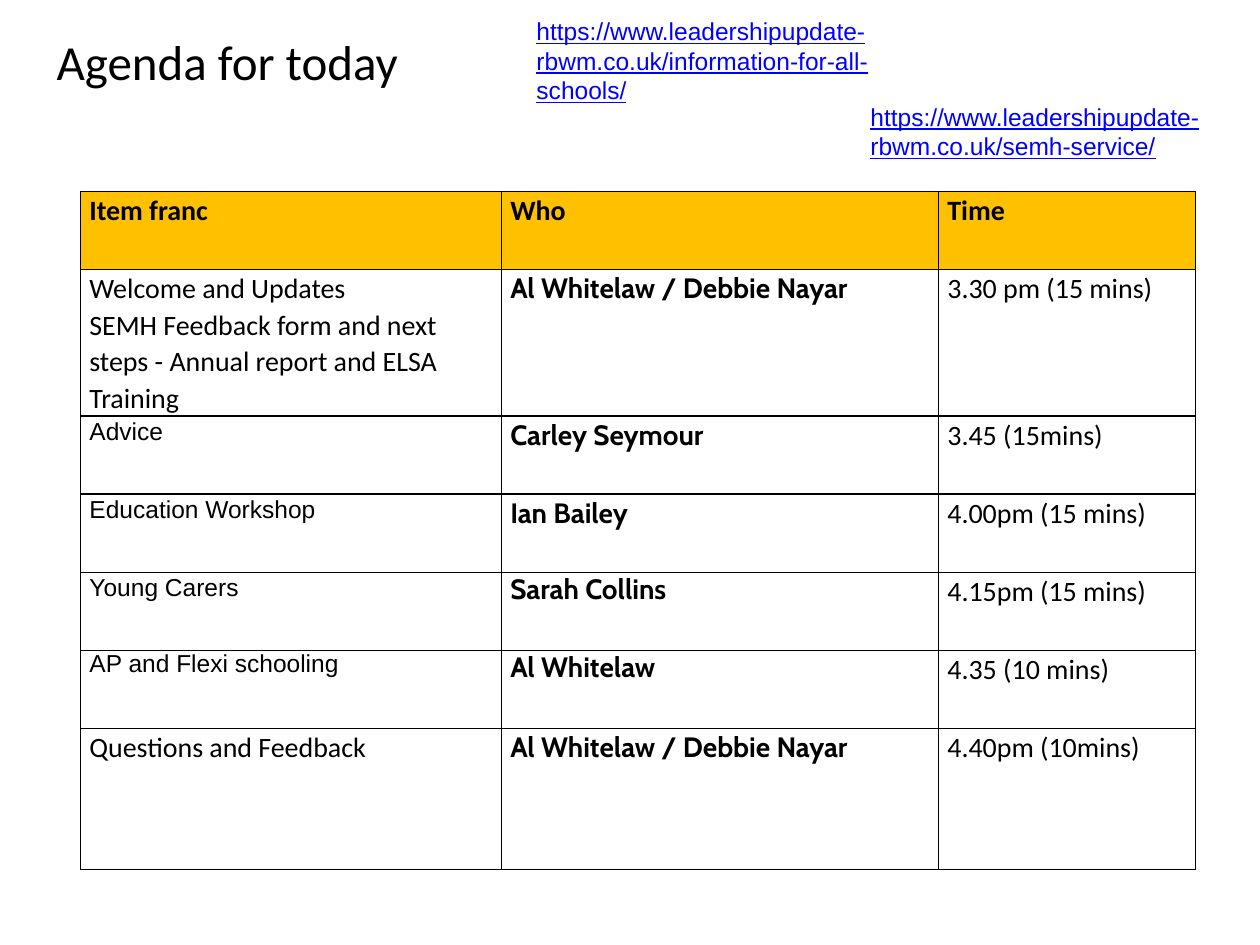
from pptx import Presentation
from pptx.dml.color import RGBColor
from pptx.enum.text import MSO_ANCHOR as Anchor, PP_ALIGN as Align
from pptx.oxml import parse_xml
from pptx.oxml.ns import nsdecls
from pptx.util import Inches, Pt

BLACK = RGBColor(0, 0, 0)
BLUE = RGBColor(0, 0, 255)
GOLD = RGBColor(255, 192, 0)

COLS = (3.34, 3.47, 2.04)
HEIGHTS = (0.62, 0.65, 0.62, 0.62, 0.62, 0.62, 1.12)
HEAD = ("Item franc", "Who", "Time")
ROWS = (
    ("Welcome and Updates\nSEMH Feedback form and next steps - Annual report and ELSA Training",
     "Al Whitelaw / Debbie Nayar", "3.30 pm (15 mins)"),
    ("Advice", "Carley Seymour", "3.45 (15mins)"),
    ("Education Workshop", "Ian Bailey", "4.00pm (15 mins)"),
    ("Young Carers", "Sarah Collins", "4.15pm (15 mins)"),
    ("AP and Flexi schooling", "Al Whitelaw", "4.35 (10 mins)"),
    ("Questions and Feedback", "Al Whitelaw / Debbie Nayar", "4.40pm (10mins)"),
)
SMALL = {(r, 0) for r in range(2, 6)}
TIGHT = {(4, 1), (5, 0), (5, 1)}
LINKS = (
    ("https://www.leadershipupdate-rbwm.co.uk/semh-service/", (6.81, 0.76, 3.1, 0.57)),
    ("https://www.leadershipupdate-rbwm.co.uk/information-for-all-schools/",
     (4.16, 0.08, 3.1, 0.81)),
)


def style(frame, name, size, color, bold=False, line=False):
    """Format every run in a text frame."""
    for par in frame.paragraphs:
        for run in par.runs:
            font = run.font
            font.name, font.size, font.bold = name, Pt(size), bold
            font.color.rgb = color
            if line:
                font.underline = True


def add_title(slide, box):
    """Place the slide title in its placeholder."""
    title = slide.shapes.title
    title.left, title.top, title.width, title.height = map(Inches, box)
    frame = title.text_frame
    frame.text = "Agenda for today"
    frame.vertical_anchor = Anchor.MIDDLE
    frame.paragraphs[0].alignment = Align.LEFT
    style(frame, "Calibri", 28, BLACK)


def add_edges(cell):
    """Draw a thin black border around a cell."""
    props = cell._tc.get_or_add_tcPr()
    for side in "LRTB":
        props.append(parse_xml(
            f'<a:ln{side} {nsdecls("a")} w="12700"><a:solidFill>'
            f'<a:srgbClr val="{BLACK}"/></a:solidFill></a:ln{side}>'))


def fill_cell(cell, text, row, col):
    """Write and format one agenda cell."""
    cell.margin_left = cell.margin_right = Inches(0.07)
    cell.margin_top = cell.margin_bottom = 0
    add_edges(cell)
    if row == 0:
        cell.fill.solid()
        cell.fill.fore_color.rgb = GOLD
    else:
        cell.fill.background()
    frame = cell.text_frame
    frame.text = text
    for par in frame.paragraphs:
        par.line_spacing = 1.0 if (row, col) in TIGHT else 1.07
    if (row, col) in SMALL:
        style(frame, "Arial", 14, BLACK)
    else:
        name = "Cabin" if row and col == 1 else "Calibri"
        style(frame, name, 16, BLACK, bold=row == 0 or col == 1)


def add_agenda(slide, box):
    """Build the agenda table in the given box."""
    data = (HEAD, *ROWS)
    table = slide.shapes.add_table(len(data), len(HEAD), *map(Inches, box)).table
    for col, width in zip(table.columns, COLS):
        col.width = Inches(width)
    for row, height in zip(table.rows, HEIGHTS):
        row.height = Inches(height)
    for r, texts in enumerate(data):
        for c, text in enumerate(texts):
            fill_cell(table.cell(r, c), text, r, c)


def add_link(slide, text, box):
    """Write a web address in a wrapped text box."""
    frame = slide.shapes.add_textbox(*map(Inches, box)).text_frame
    frame.word_wrap = True
    frame.text = text
    style(frame, "Arial", 14, BLUE, line=True)


def main():
    """Build and save the agenda slide."""
    deck = Presentation()
    deck.slide_width, deck.slide_height = Inches(10), Inches(7.5)
    slide = deck.slides.add_slide(deck.slide_layouts[5])
    add_title(slide, (0.35, -0.1, 6.91, 1.17))
    add_agenda(slide, (0.64, 1.52, sum(COLS), sum(HEIGHTS)))
    for text, box in LINKS:
        add_link(slide, text, box)
    deck.save("out.pptx")


if __name__ == "__main__":
    main()
